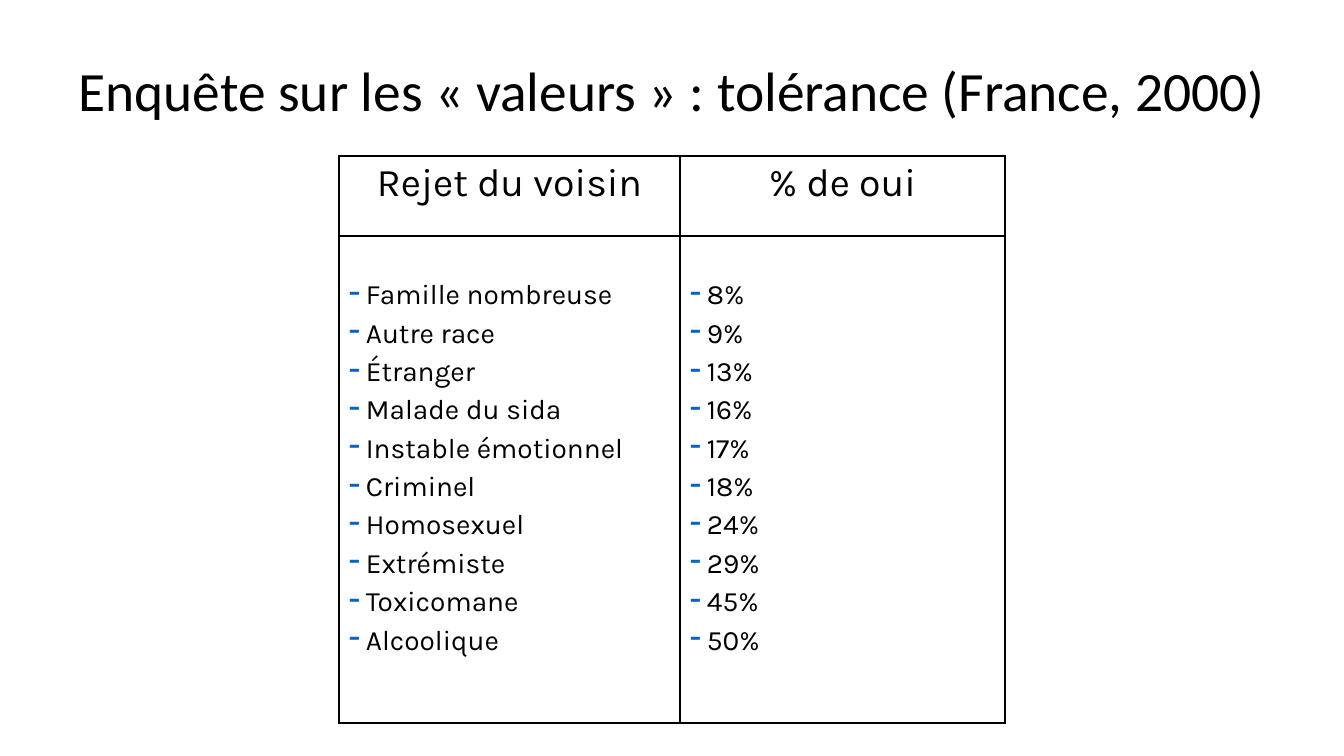
import pptx
import pptx.dml.color
import pptx.enum.text
import pptx.oxml
import pptx.oxml.ns
import pptx.util
from dataclasses import dataclass

TITLE = "Enquête sur les «\u00a0valeurs\u00a0» : tolérance (France, 2000)"
HEADERS = ("Rejet du voisin", "% de oui")
REJECTIONS = [
    ("Famille nombreuse", 8),
    ("Autre race", 9),
    ("Étranger", 13),
    ("Malade du sida", 16),
    ("Instable émotionnel", 17),
    ("Criminel", 18),
    ("Homosexuel", 24),
    ("Extrémiste", 29),
    ("Toxicomane", 45),
    ("Alcoolique", 50),
]

SLIDE_SIZE = (1344, 756)
TITLE_BOX = (67, 32, 1210, 124)
TABLE_ORIGIN = (339, 156)
COLUMN_WIDTHS = (341, 325)
ROW_HEIGHTS = (80, 487)
CELL_MARGINS = (10, 5)
LIST_TOP_MARGIN = 43
BULLET_INDENT = 17
EMU_PER_PX = 914400 / 100.8


@dataclass(frozen=True)
class Theme:
    ink: str = "000000"
    bullet: str = "0563C1"
    title_font: str = "Calibri"
    table_font: str = "Karla"
    title_size: float = 39.6
    header_size: float = 28
    list_size: float = 20
    list_gap: float = 4
    outer_line: float = 2.25
    inner_line: float = 1


THEME = Theme()
CENTER = pptx.enum.text.PP_ALIGN.CENTER
LEFT = pptx.enum.text.PP_ALIGN.LEFT


def px(length):
    return pptx.util.Emu(round(length * EMU_PER_PX))


def add_xml(parent, markup):
    namespace = pptx.oxml.ns.nsdecls("a")
    parent.append(pptx.oxml.parse_xml(markup.replace(" ", f" {namespace} ", 1)))


def style_paragraph(paragraph, text, font_name, size, alignment):
    paragraph.text = text
    paragraph.alignment = alignment
    paragraph.font.name = font_name
    paragraph.font.size = pptx.util.Pt(size)
    paragraph.font.color.rgb = pptx.dml.color.RGBColor.from_string(THEME.ink)


def add_bullet(paragraph):
    properties = paragraph._p.get_or_add_pPr()
    properties.set("marL", str(px(BULLET_INDENT)))
    properties.set("indent", str(-px(BULLET_INDENT)))
    run_defaults = properties.find(pptx.oxml.ns.qn("a:defRPr"))
    properties.remove(run_defaults)
    add_xml(properties, f'<a:buClr ><a:srgbClr val="{THEME.bullet}"/></a:buClr>')
    add_xml(properties, '<a:buSzPct val="120000"/>')
    add_xml(properties, '<a:buChar char="-"/>')
    properties.append(run_defaults)


def style_cell(cell, row, column):
    outer_edges = {
        "lnL": column == 0,
        "lnR": column == len(COLUMN_WIDTHS) - 1,
        "lnT": row == 0,
        "lnB": row == len(ROW_HEIGHTS) - 1,
    }
    cell.margin_left = cell.margin_right = px(CELL_MARGINS[0])
    cell.margin_top = cell.margin_bottom = px(CELL_MARGINS[1])
    properties = cell._tc.get_or_add_tcPr()
    for edge, is_outer in outer_edges.items():
        width = pptx.util.Pt(THEME.outer_line if is_outer else THEME.inner_line)
        add_xml(
            properties,
            f'<a:{edge} w="{width}"><a:solidFill><a:srgbClr val="{THEME.ink}"/>'
            f"</a:solidFill></a:{edge}>",
        )
    cell.fill.background()


def fill_list(cell, items):
    cell.margin_top = px(LIST_TOP_MARGIN)
    frame = cell.text_frame
    for index, item in enumerate(items):
        paragraph = frame.add_paragraph() if index else frame.paragraphs[0]
        style_paragraph(paragraph, item, THEME.table_font, THEME.list_size, LEFT)
        paragraph.space_before = pptx.util.Pt(THEME.list_gap if index else 0)
        add_bullet(paragraph)


def add_title(slide):
    frame = slide.shapes.add_textbox(*map(px, TITLE_BOX)).text_frame
    frame.word_wrap = True
    frame.vertical_anchor = pptx.enum.text.MSO_ANCHOR.MIDDLE
    paragraph = frame.paragraphs[0]
    style_paragraph(paragraph, TITLE, THEME.title_font, THEME.title_size, CENTER)
    paragraph.line_spacing = 0.9


def add_survey_table(slide):
    size = (sum(COLUMN_WIDTHS), sum(ROW_HEIGHTS))
    table = slide.shapes.add_table(
        len(ROW_HEIGHTS), len(COLUMN_WIDTHS), *map(px, TABLE_ORIGIN + size)
    ).table
    table.first_row = table.horz_banding = False
    for row, height in zip(table.rows, ROW_HEIGHTS):
        row.height = px(height)
    neighbours, shares = zip(*REJECTIONS)
    lists = (neighbours, [f"{share}%" for share in shares])
    for column, width in enumerate(COLUMN_WIDTHS):
        table.columns[column].width = px(width)
        for row in range(len(ROW_HEIGHTS)):
            style_cell(table.cell(row, column), row, column)
        heading = table.cell(0, column).text_frame.paragraphs[0]
        style_paragraph(
            heading, HEADERS[column], THEME.table_font, THEME.header_size, CENTER
        )
        fill_list(table.cell(1, column), lists[column])


def main():
    presentation = pptx.Presentation()
    presentation.slide_width, presentation.slide_height = map(px, SLIDE_SIZE)
    slide = presentation.slides.add_slide(presentation.slide_layouts[6])
    add_title(slide)
    add_survey_table(slide)
    presentation.save("out.pptx")


if __name__ == "__main__":
    main()
